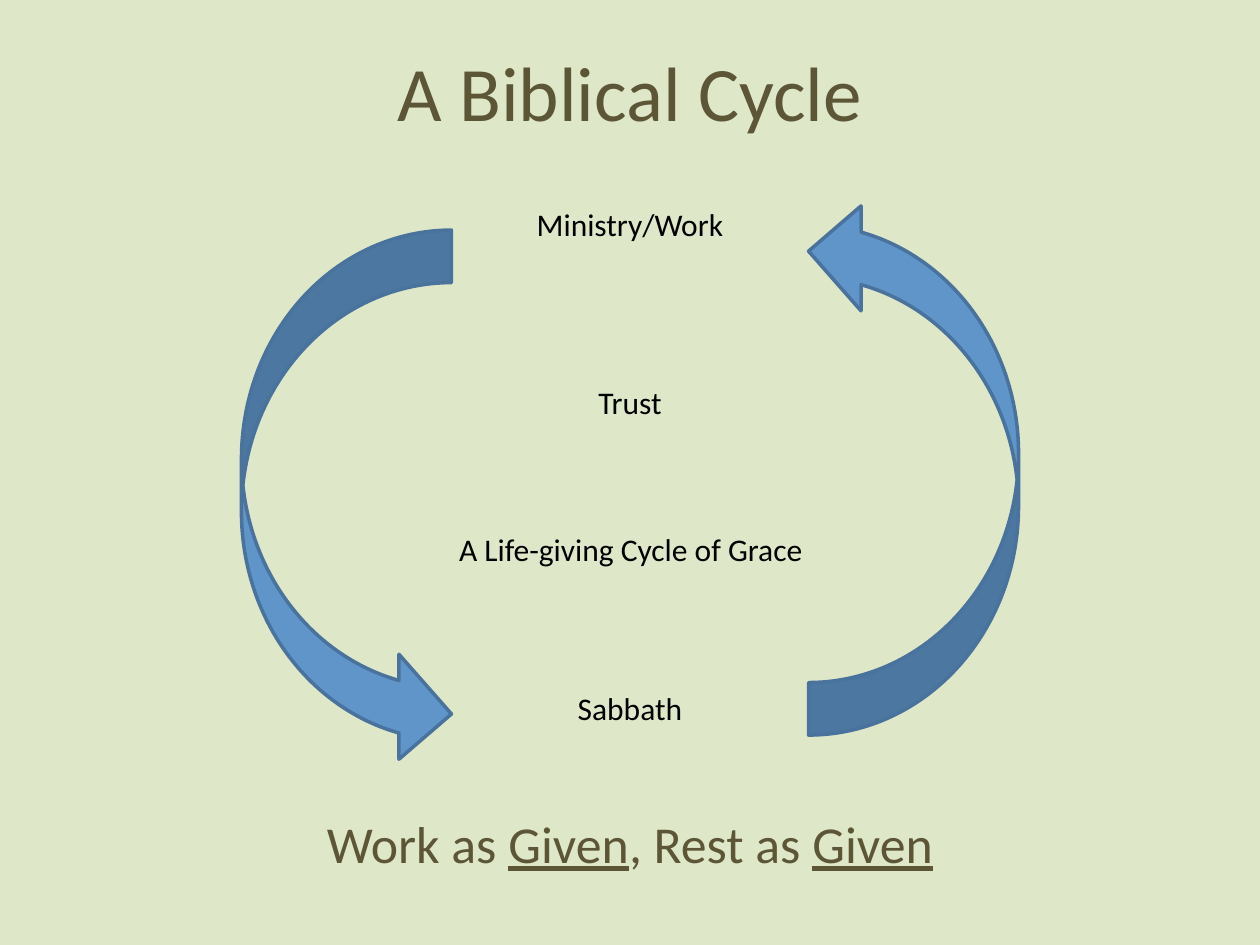
from dataclasses import dataclass

from pptx import Presentation
from pptx.dml.color import RGBColor
from pptx.enum import shapes, text
from pptx.util import Pt

COLORS = {
    "background": "DEE8C8",
    "heading": "5C5637",
    "label": "000000",
    "arrow": "6095C9",
    "outline": "49729C",
}
FONT = "Calibri"
INSET = 2.9


@dataclass
class Box:
    left: float
    top: float
    width: float
    height: float

    def lengths(self):
        return [Pt(value) for value in (self.left, self.top, self.width, self.height)]


@dataclass
class Label:
    words: str
    box: Box


@dataclass
class CycleArrow:
    box: Box
    rotation: float


LABELS = [
    Label("Ministry/Work", Box(257.5, 114.5, 205, 41)),
    Label("Sabbath", Box(257.5, 391, 205, 41)),
    Label("Trust", Box(257.5, 216, 205, 60)),
    Label("A Life-giving Cycle of Grace", Box(174, 300, 373, 35)),
]
ARROWS = [
    CycleArrow(Box(138, 131.5, 120, 306.5), 0),
    CycleArrow(Box(462, 113.5, 120, 306.5), 180),
]


def color(name: str) -> RGBColor:
    return RGBColor.from_string(COLORS[name])


def format_text(shape, size: float, color_name: str, anchor=text.MSO_ANCHOR.TOP):
    """Style the shape's only paragraph and return it."""
    frame = shape.text_frame
    frame.word_wrap = True
    frame.auto_size = text.MSO_AUTO_SIZE.NONE
    frame.vertical_anchor = anchor
    frame.margin_left = frame.margin_right = Pt(INSET)
    frame.margin_top = frame.margin_bottom = Pt(INSET)
    paragraph = frame.paragraphs[0]
    paragraph.alignment = text.PP_ALIGN.CENTER
    paragraph.font.name = FONT
    paragraph.font.size = Pt(size)
    paragraph.font.color.rgb = color(color_name)
    return paragraph


def place(shape, box: Box) -> None:
    shape.left, shape.top, shape.width, shape.height = box.lengths()


def draw_headings(slide) -> None:
    title, subtitle = slide.placeholders
    place(title, Box(54, -6, 612, 116))
    title.text_frame.text = "A Biblical Cycle"
    format_text(title, 44, "heading", text.MSO_ANCHOR.MIDDLE)

    place(subtitle, Box(108, 468, 504, 39))
    paragraph = format_text(subtitle, 29.6, "heading")
    paragraph.line_spacing = 0.8
    paragraph.space_before = Pt(7)
    for words in ("Work as ", "Given", ", Rest as ", "Given"):
        run = paragraph.add_run()
        run.text = words
        if words == "Given":
            run.font.underline = True


def draw_arrow(slide, arrow: CycleArrow) -> None:
    shape = slide.shapes.add_shape(
        shapes.MSO_SHAPE.CURVED_RIGHT_ARROW, *arrow.box.lengths())
    shape.rotation = arrow.rotation
    shape.shadow.inherit = False
    shape.fill.solid()
    shape.fill.fore_color.rgb = color("arrow")
    shape.line.color.rgb = color("outline")
    shape.line.width = Pt(2)


def draw_label(slide, label: Label) -> None:
    shape = slide.shapes.add_textbox(*label.box.lengths())
    shape.text_frame.text = label.words
    format_text(shape, 18, "label")


def main() -> None:
    presentation = Presentation()
    presentation.slide_width, presentation.slide_height = Pt(720), Pt(540)
    slide = presentation.slides.add_slide(presentation.slide_layouts[0])
    slide.background.fill.solid()
    slide.background.fill.fore_color.rgb = color("background")
    draw_headings(slide)
    for arrow in ARROWS:
        draw_arrow(slide, arrow)
    for label in LABELS:
        draw_label(slide, label)
    presentation.save("out.pptx")


if __name__ == "__main__":
    main()
